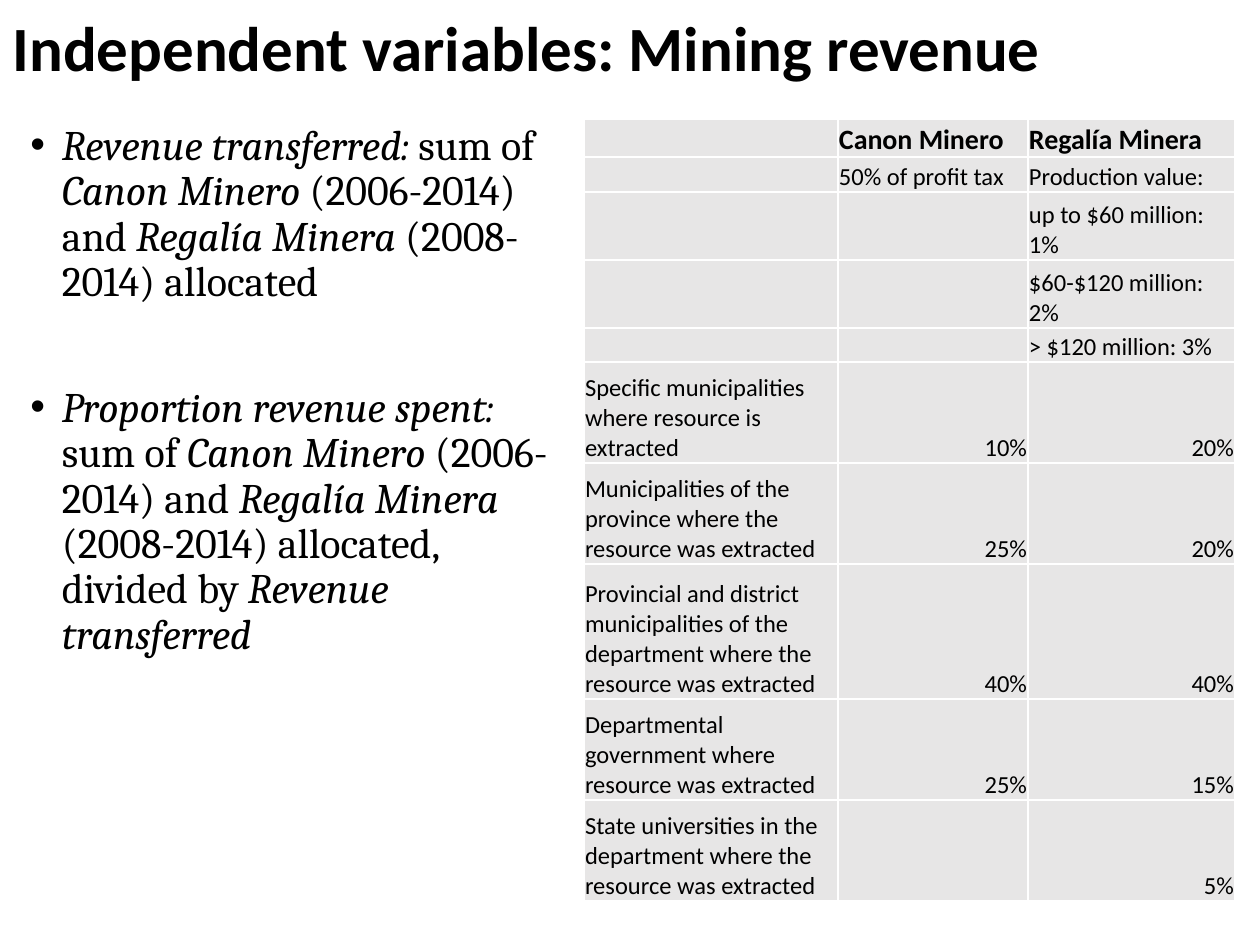
from lxml import etree
from pptx import Presentation
from pptx.dml.color import RGBColor
from pptx.enum.text import MSO_ANCHOR, MSO_AUTO_SIZE, PP_ALIGN
from pptx.oxml.ns import qn
from pptx.util import Pt

LEFT, RIGHT = PP_ALIGN.LEFT, PP_ALIGN.RIGHT
MIDDLE, BOTTOM = MSO_ANCHOR.MIDDLE, MSO_ANCHOR.BOTTOM
NO_AUTOFIT = MSO_AUTO_SIZE.NONE

EMU_PER_PX = 914400 / 126
COLORS = {"text": "000000", "cell": "E7E6E6", "border": "FFFFFF"}

COLUMN_WIDTHS = [254, 190, 207]
ROW_HEIGHTS = [38, 35, 68, 68, 34, 101, 101, 135, 101, 101]
REVENUE_RULES = [
    ("", "Canon Minero", "Regalía Minera"),
    ("", "50% of profit tax", "Production value:"),
    ("", "", "up to $60 million: 1%"),
    ("", "", "$60-$120 million: 2%"),
    ("", "", "> $120 million: 3%"),
    ("Specific municipalities where resource is extracted", "10%", "20%"),
    ("Municipalities of the province where the resource was extracted", "25%", "20%"),
    ("Provincial and district municipalities of the department where the "
     "resource was extracted", "40%", "40%"),
    ("Departmental government where resource was extracted", "25%", "15%"),
    ("State universities in the department where the resource was extracted", "", "5%"),
]
FIRST_SHARE_ROW = 5

# Runs alternate between italic and upright, starting with italic.
DEFINITIONS = [
    ("Revenue transferred: ", "sum of ", "Canon Minero ", "(2006-2014) and ",
     "Regalía Minera ", "(2008-2014) allocated"),
    ("Proportion revenue spent: ", "sum of ", "Canon Minero ", "(2006-2014) and ",
     "Regalía Minera ", "(2008-2014) allocated, divided by ", "Revenue transferred"),
]
DEFINITION_SPACING = [10, 46]


def px(length):
    return round(length * EMU_PER_PX)


def place(shape, left, top, width, height):
    shape.left, shape.top = px(left), px(top)
    shape.width, shape.height = px(width), px(height)


def add_run(paragraph, text, font_name, size, bold=False, italic=False):
    run = paragraph.add_run()
    run.text = text
    font = run.font
    font.name, font.size = font_name, Pt(size)
    font.bold, font.italic = bold, italic
    font.color.rgb = RGBColor.from_string(COLORS["text"])


def add_bullet(paragraph):
    properties = paragraph._p.get_or_add_pPr()
    properties.set("marL", str(px(31.5)))
    properties.set("indent", str(px(-31.5)))
    etree.SubElement(properties, qn("a:buFont")).set("typeface", "Arial")
    etree.SubElement(properties, qn("a:buChar")).set("char", "•")


def fill_title(title):
    place(title, 0, -40, 1086, 183)
    frame = title.text_frame
    frame.auto_size = NO_AUTOFIT
    frame.word_wrap = True
    frame.vertical_anchor = MIDDLE
    heading = frame.paragraphs[0]
    heading.alignment = LEFT
    heading.line_spacing = 0.9
    add_run(heading, "Independent variables: Mining revenue", "Calibri", 36, bold=True)


def add_definitions(slide):
    box = slide.shapes.add_textbox(px(18), px(118), px(566), px(808))
    frame = box.text_frame
    frame.word_wrap = True
    for index, (parts, space) in enumerate(zip(DEFINITIONS, DEFINITION_SPACING)):
        definition = frame.add_paragraph() if index else frame.paragraphs[0]
        definition.line_spacing = 0.9
        definition.space_before = Pt(space)
        add_bullet(definition)
        for position, part in enumerate(parts):
            add_run(definition, part, "Cambria", 24, italic=position % 2 == 0)


def add_borders(cell):
    properties = cell._tc.get_or_add_tcPr()
    for side in ("lnL", "lnR", "lnT", "lnB"):
        line = etree.SubElement(properties, qn(f"a:{side}"), w=str(Pt(1)))
        fill = etree.SubElement(line, qn("a:solidFill"))
        etree.SubElement(fill, qn("a:srgbClr")).set("val", COLORS["border"])


def fill_cell(cell, text, header, share):
    add_borders(cell)
    cell.fill.solid()
    cell.fill.fore_color.rgb = RGBColor.from_string(COLORS["cell"])
    cell.margin_left = cell.margin_right = cell.margin_top = px(1)
    cell.margin_bottom = 0
    cell.vertical_anchor = BOTTOM
    entry = cell.text_frame.paragraphs[0]
    entry.alignment = RIGHT if share else LEFT
    if text:
        add_run(entry, text, "Calibri", 16 if header else 14, bold=header)
    else:
        # Keeps an empty cell from stretching its row.
        entry._p.get_or_add_endParaRPr().set("sz", "1400")


def add_revenue_table(slide):
    frame = slide.shapes.add_table(
        len(ROW_HEIGHTS), len(COLUMN_WIDTHS), px(584), px(119),
        px(sum(COLUMN_WIDTHS)), px(sum(ROW_HEIGHTS)))
    table = frame.table
    table.first_row = table.horz_banding = False
    for column, width in zip(table.columns, COLUMN_WIDTHS):
        column.width = px(width)
    for row, height in zip(table.rows, ROW_HEIGHTS):
        row.height = px(height)
    for r, texts in enumerate(REVENUE_RULES):
        for c, text in enumerate(texts):
            fill_cell(table.cell(r, c), text, header=r == 0,
                      share=r >= FIRST_SHARE_ROW and c > 0)


def main():
    presentation = Presentation()
    presentation.slide_width, presentation.slide_height = px(1260), px(945)
    slide = presentation.slides.add_slide(presentation.slide_layouts[5])
    fill_title(slide.shapes.title)
    add_definitions(slide)
    add_revenue_table(slide)
    presentation.save("out.pptx")


if __name__ == "__main__":
    main()
